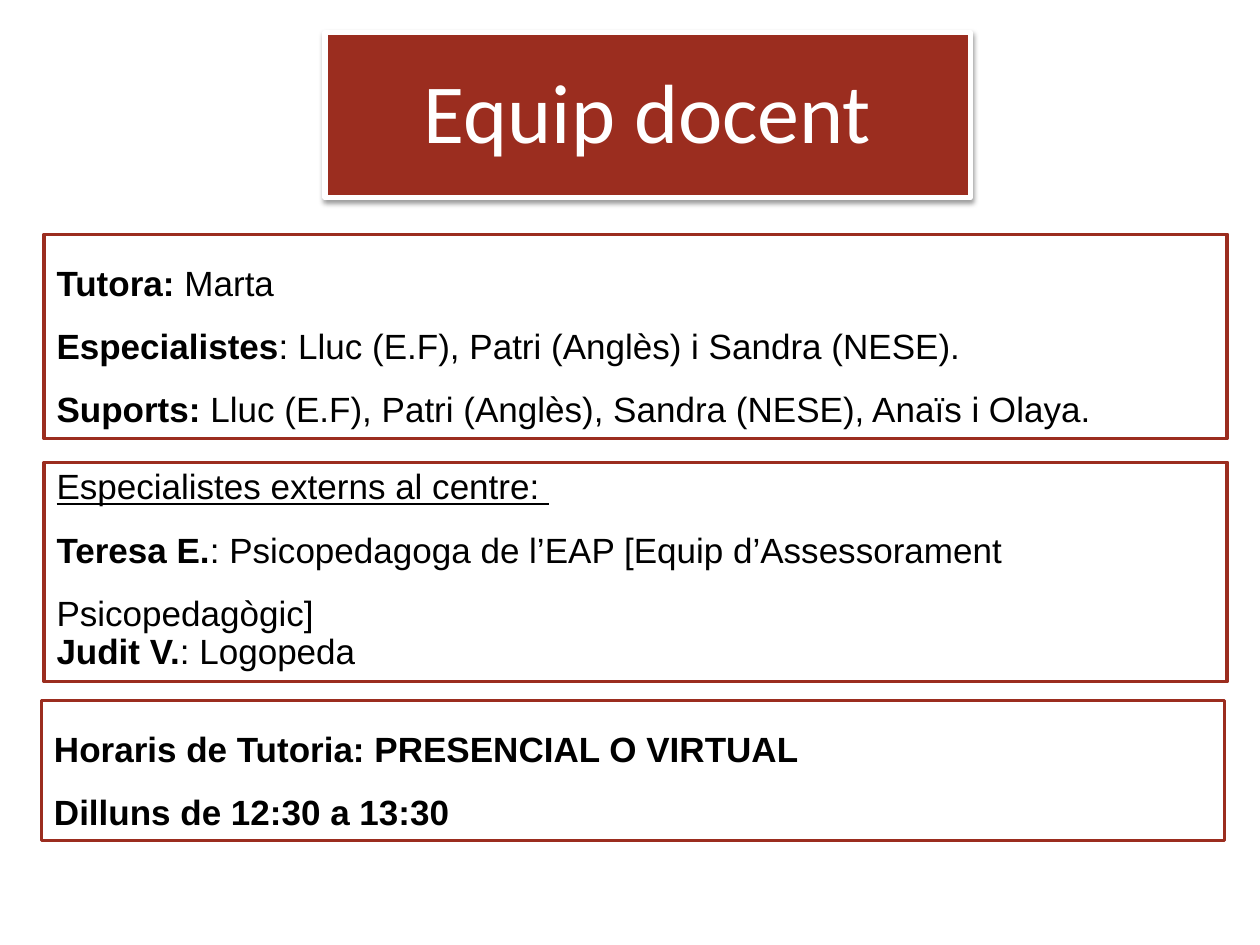
from dataclasses import dataclass

from lxml.etree import SubElement
from pptx import Presentation
from pptx.dml.color import RGBColor
from pptx.enum.shapes import MSO_SHAPE
from pptx.enum.text import MSO_ANCHOR, MSO_AUTO_SIZE, PP_ALIGN
from pptx.oxml.ns import qn
from pptx.util import Inches, Pt


@dataclass(frozen=True)
class Theme:
    accent: RGBColor = RGBColor(0x9B, 0x2D, 0x1F)
    paper: RGBColor = RGBColor(0xFF, 0xFF, 0xFF)
    ink: RGBColor = RGBColor(0x00, 0x00, 0x00)
    title_font: str = "Calibri"
    body_font: str = "Arial"
    title_size: Pt = Pt(48)
    body_size: Pt = Pt(20)


theme = Theme()
TIGHT, LOOSE = 0.93, 1.5


def paint(box, fill, line, width):
    box.fill.solid()
    box.fill.fore_color.rgb = fill
    box.line.color.rgb = line
    box.line.width = Pt(width)


prs = Presentation()
prs.slide_width, prs.slide_height = Inches(10), Inches(7.5)
slide = prs.slides.add_slide(prs.slide_layouts[5])

# Title banner
title = slide.shapes.title
title.left, title.top = Inches(2.58), Inches(0.26)
title.width, title.height = Inches(5.12), Inches(1.31)
paint(title, theme.accent, theme.paper, 3)
title_frame = title.text_frame
title_frame.text = "Equip docent"
title_frame.auto_size = MSO_AUTO_SIZE.NONE
title_frame.vertical_anchor = MSO_ANCHOR.MIDDLE
heading = title_frame.paragraphs[0]
heading.alignment = PP_ALIGN.CENTER
heading.line_spacing = TIGHT
heading.font.name = theme.title_font
heading.font.size = theme.title_size
heading.font.color.rgb = theme.paper

# Soft shadow below the banner
effects = SubElement(title._element.spPr, qn("a:effectLst"))
shadow = SubElement(effects, qn("a:outerShdw"), blurRad=str(Pt(3.1)),
                    dist=str(Pt(1.6)), dir="5400000", rotWithShape="0")
shadow_color = SubElement(shadow, qn("a:srgbClr"), val=str(theme.ink))
SubElement(shadow_color, qn("a:alpha"), val="38000")

# Panels: left, top, height, then lines of (spacing, bold, underlined, plain)
panels = [
    (0.35, 1.86, 1.62, [
        (LOOSE, "Tutora: ", "", "Marta"),
        (LOOSE, "Especialistes", "", ": Lluc (E.F), Patri (Anglès) i Sandra (NESE)."),
        (LOOSE, "Suports: ", "",
         "Lluc (E.F), Patri (Anglès), Sandra (NESE), Anaïs i Olaya."),
    ]),
    (0.35, 3.67, 1.74, [
        (TIGHT, "", "Especialistes externs al centre: ", ""),
        (LOOSE, "Teresa E.", "",
         ": Psicopedagoga de l’EAP [Equip d’Assessorament Psicopedagògic]"),
        (TIGHT, "Judit V.", "", ": Logopeda"),
    ]),
    (0.33, 5.56, 1.11, [
        (LOOSE, "Horaris de Tutoria: PRESENCIAL O VIRTUAL", "", ""),
        (LOOSE, "Dilluns de 12:30 a 13:30", "", ""),
    ]),
]

for left, top, height, lines in panels:
    panel = slide.shapes.add_shape(MSO_SHAPE.RECTANGLE, Inches(left), Inches(top),
                                   Inches(9.39), Inches(height))
    panel.shadow.inherit = False
    paint(panel, theme.paper, theme.accent, 2)
    frame = panel.text_frame
    frame.word_wrap = True
    frame.auto_size = MSO_AUTO_SIZE.SHAPE_TO_FIT_TEXT
    frame.vertical_anchor = MSO_ANCHOR.TOP
    for index, (spacing, bold, underlined, plain) in enumerate(lines):
        paragraph = frame.add_paragraph() if index else frame.paragraphs[0]
        paragraph.alignment = PP_ALIGN.LEFT
        paragraph.line_spacing = spacing
        paragraph.font.name = theme.body_font
        paragraph.font.size = theme.body_size
        paragraph.font.color.rgb = theme.ink
        for text in filter(None, (bold, underlined, plain)):
            run = paragraph.add_run()
            run.text = text
            run.font.bold = text == bold
            run.font.underline = text == underlined

prs.save("out.pptx")
